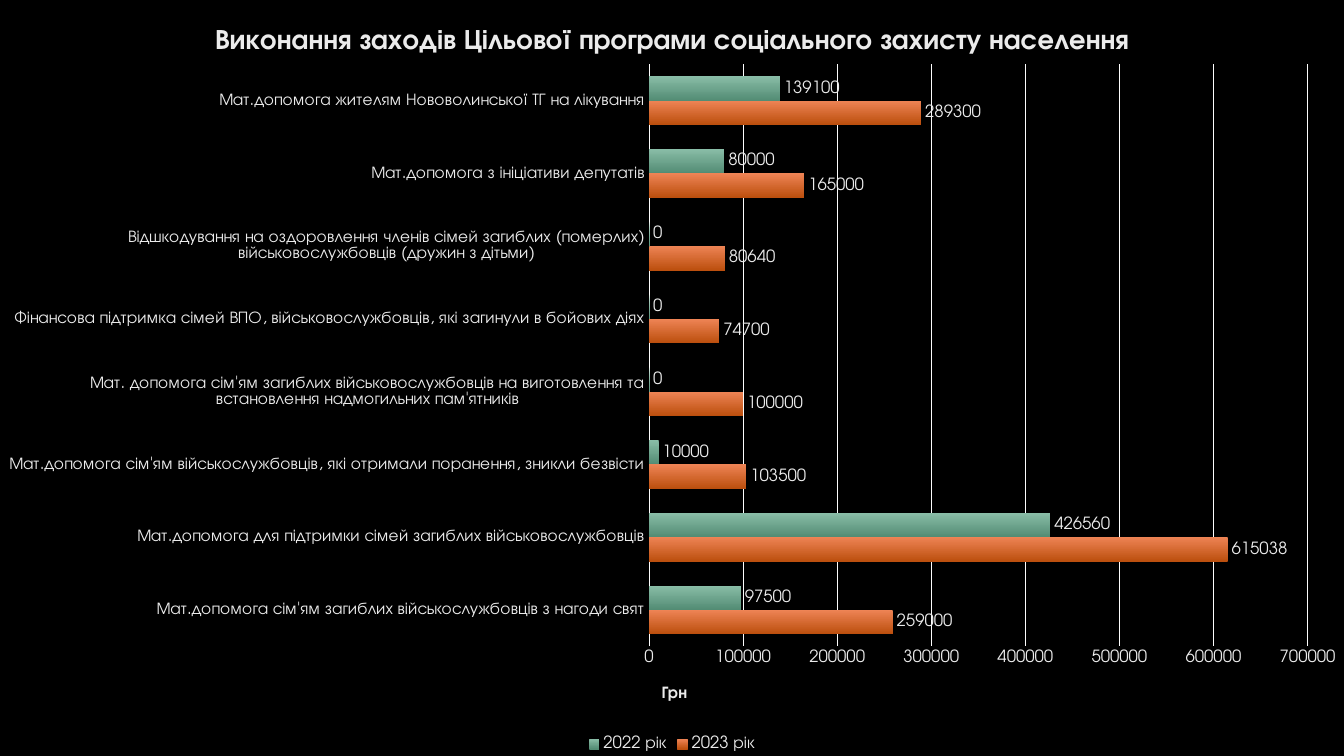
from dataclasses import dataclass

import lxml.etree
import pptx
import pptx.chart.data
import pptx.dml.color
import pptx.enum.chart
import pptx.oxml.ns
import pptx.util

RGB = pptx.dml.color.RGBColor
Pt = pptx.util.Pt
qn = pptx.oxml.ns.qn

BLACK = RGB(0x00, 0x00, 0x00)
TEXT = RGB(0xEB, 0xEB, 0xEB)
GRID = RGB(0xFC, 0xFC, 0xFC)
ORANGE_LIGHT = RGB(0xEE, 0x84, 0x55)
ORANGE_DARK = RGB(0xBC, 0x4F, 0x0E)
GREEN_LIGHT = RGB(0x89, 0xBD, 0xA7)
GREEN_DARK = RGB(0x53, 0x8C, 0x74)
FONT = "TeX Gyre Adventor"
SLIDE_WIDTH, SLIDE_HEIGHT = Pt(960), Pt(540)


@dataclass(frozen=True)
class YearSpending:
    name: str
    amounts: tuple[int, ...]
    gradient: tuple[RGB, RGB]


MEASURES = (
    "Мат.допомога сім'ям загиблих військослужбовців з нагоди свят",
    "Мат.допомога для підтримки сімей загиблих військовослужбовців",
    "Мат.допомога сім'ям військослужбовців, які отримали поранення, зникли безвісти",
    "Мат. допомога сім'ям загиблих військовослужбовців на виготовлення та "
    "встановлення надмогильних пам'ятників",
    "Фінансова підтримка сімей ВПО, військовослужбовців, які загинули в бойових діях",
    "Відшкодування на оздоровлення членів сімей загиблих (померлих) "
    "військовослужбовців (дружин з дітьми)",
    "Мат.допомога з ініціативи депутатів",
    "Мат.допомога жителям Нововолинської ТГ на лікування",
)
YEARS = (
    YearSpending(
        "2023 рік",
        (259000, 615038, 103500, 100000, 74700, 80640, 165000, 289300),
        (ORANGE_LIGHT, ORANGE_DARK),
    ),
    YearSpending(
        "2022 рік",
        (97500, 426560, 10000, 0, 0, 0, 80000, 139100),
        (GREEN_LIGHT, GREEN_DARK),
    ),
)


def style_font(font, size: float = 12, bold: bool = False) -> None:
    font.name = FONT
    font.size = Pt(size)
    font.bold = bold
    font.color.rgb = TEXT


def style_line(line) -> None:
    line.color.rgb = GRID
    line.width = Pt(0.75)


def write_title(titled, text: str, size: float) -> None:
    run = titled.text_frame.paragraphs[0].add_run()
    run.text = text
    style_font(run.font, size, bold=True)


def set_layout(parent, index: int, settings: dict[str, str | float]) -> None:
    for old_layout in parent.findall(qn("c:layout")):
        parent.remove(old_layout)
    layout = lxml.etree.Element(qn("c:layout"))
    manual = lxml.etree.SubElement(layout, qn("c:manualLayout"))
    for tag, value in settings.items():
        lxml.etree.SubElement(manual, qn(f"c:{tag}")).set("val", str(value))
    parent.insert(index, layout)


def style_year(series, year: YearSpending) -> None:
    fill = series.format.fill
    fill.gradient()
    fill.gradient_angle = 270
    for stop, color in zip(fill.gradient_stops, year.gradient):
        stop.color.rgb = color
    series.invert_if_negative = False
    labels = series.data_labels
    labels.show_value = True
    labels.position = pptx.enum.chart.XL_LABEL_POSITION.OUTSIDE_END
    style_font(labels.font)


def style_axes(chart) -> None:
    measures, amounts = chart.category_axis, chart.value_axis
    for axis in (measures, amounts):
        axis.major_tick_mark = pptx.enum.chart.XL_TICK_MARK.NONE
        axis.minor_tick_mark = pptx.enum.chart.XL_TICK_MARK.NONE
        style_font(axis.tick_labels.font)
    style_line(measures.format.line)
    amounts.format.line.fill.background()
    amounts.minimum_scale = 0
    amounts.maximum_scale = 700000
    amounts.major_unit = 100000
    style_line(amounts.major_gridlines.format.line)
    write_title(amounts.axis_title, "Грн", 12)
    set_layout(
        amounts.axis_title._element,
        1,
        {"xMode": "edge", "yMode": "edge", "x": 0.49, "y": 0.9},
    )


def add_spending_chart(slide) -> None:
    spending = pptx.chart.data.CategoryChartData(number_format="General")
    spending.categories = MEASURES
    for year in YEARS:
        spending.add_series(year.name, year.amounts)
    chart = slide.shapes.add_chart(
        pptx.enum.chart.XL_CHART_TYPE.BAR_CLUSTERED,
        Pt(0), Pt(0), SLIDE_WIDTH, SLIDE_HEIGHT, spending,
    ).chart
    style_font(chart.font)
    write_title(
        chart.chart_title,
        "Виконання заходів Цільової програми соціального захисту населення",
        20,
    )
    bars = chart.plots[0]
    bars.gap_width = 100
    bars.overlap = 0
    bars.vary_by_categories = False
    for series, year in zip(bars.series, YEARS):
        style_year(series, year)
    style_axes(chart)
    chart.has_legend = True
    chart.legend.position = pptx.enum.chart.XL_LEGEND_POSITION.BOTTOM
    chart.legend.include_in_layout = False
    style_font(chart.legend.font)
    set_layout(
        chart._chartSpace.chart.plotArea,
        0,
        {"layoutTarget": "inner", "xMode": "edge", "yMode": "edge",
         "x": 0.483, "y": 0.085, "w": 0.49, "h": 0.77},
    )


def main() -> None:
    deck = pptx.Presentation()
    deck.slide_width, deck.slide_height = SLIDE_WIDTH, SLIDE_HEIGHT
    slide = deck.slides.add_slide(deck.slide_layouts.get_by_name("Blank"))
    slide.background.fill.solid()
    slide.background.fill.fore_color.rgb = BLACK
    add_spending_chart(slide)
    deck.save("out.pptx")


if __name__ == "__main__":
    main()
